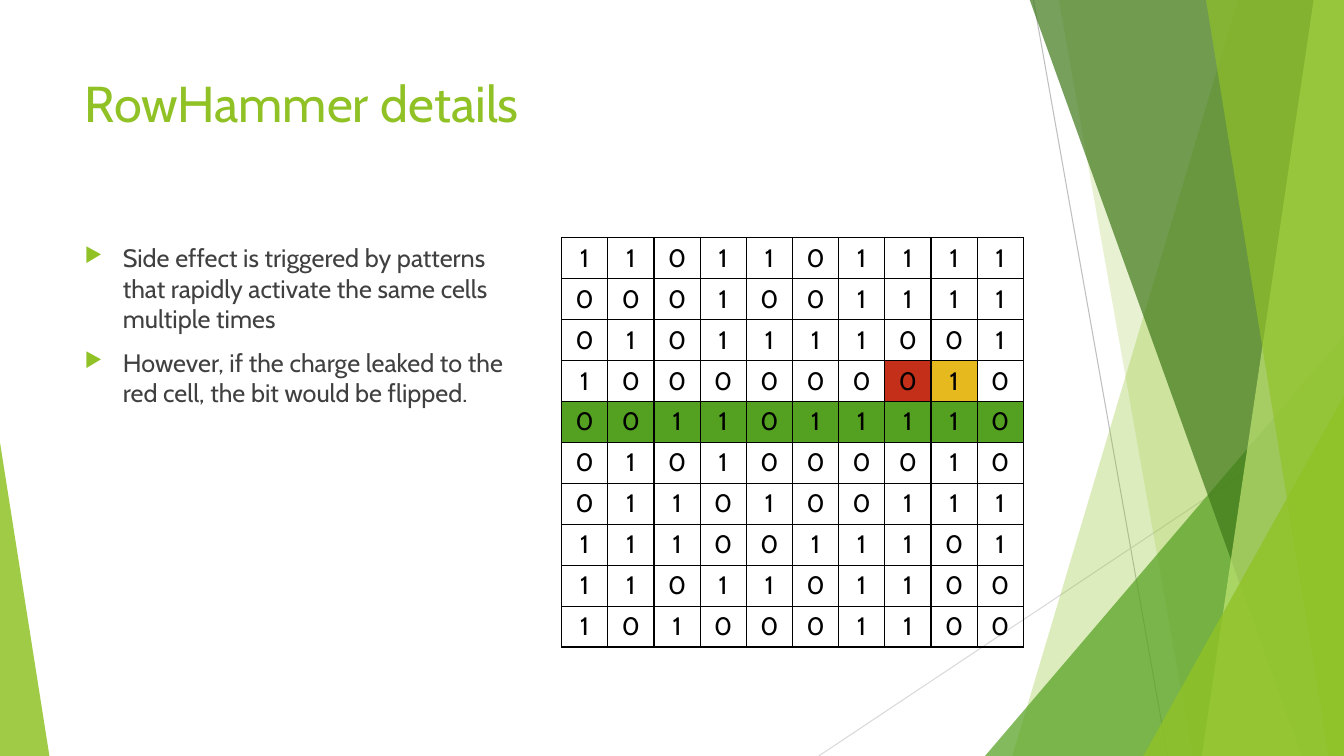
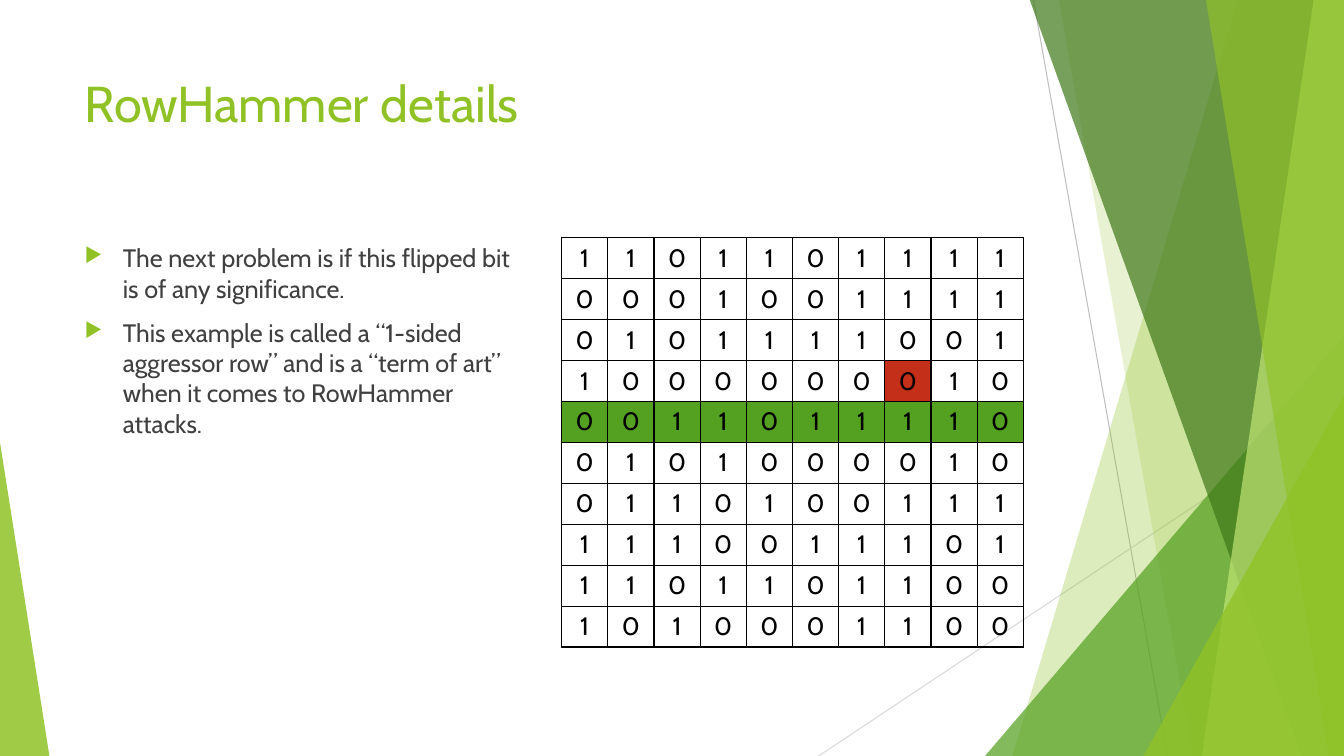
from lxml.etree import SubElement
from pptx import Presentation
from pptx.dml.color import RGBColor
from pptx.enum.shapes import MSO_CONNECTOR as Connector, MSO_SHAPE as Shape
from pptx.enum.text import MSO_ANCHOR as Anchor, PP_ALIGN as Align
from pptx.oxml.ns import qn
from pptx.util import Inches, Pt

WIDTH, HEIGHT = 13.33, 7.5
FONT = "Cabin"
COLORS = {
    "lime": "90C226", "green": "54A021", "forest": "3F7819", "pale": "C0E474",
    "red": "C42F1A", "amber": "E6B91E", "text": "404040", "black": "000000",
    "ray": "BFBFBF", "faint_ray": "D9D9D9",
}
TITLE_BOX = (0.74, 0.67, 9.4, 1.44)
BULLETS_BOX = (0.74, 2.36, 4.58, 4.24)
MEMORY_BOX = (5.57, 2.36, 4.58, 4.06)

MEMORY_ROWS = [
    "1101101111",
    "0001001111",
    "0101111001",
    "1000000010",
    "0011011110",
    "0101000010",
    "0110100111",
    "1110011101",
    "1101101100",
    "1010001100",
]
AGGRESSOR_ROW = 4
FLIPPED_BIT, NEIGHBOUR_BIT = (3, 7), (3, 8)

SLIDES = [
    (["Side effect is triggered by patterns that rapidly activate the same cells multiple times",
      "However, if the charge leaked to the red cell, the bit would be flipped."],
     {FLIPPED_BIT: "red", NEIGHBOUR_BIT: "amber"}),
    (["The next problem is if this flipped bit is of any significance.",
      "This example is called a “1-sided aggressor row” and is a “term of art” "
      "when it comes to RowHammer attacks."],
     {FLIPPED_BIT: "red"}),
]


def rgb(name):
    """Return the named palette colour."""
    return RGBColor.from_string(COLORS[name])


def inches(*lengths):
    """Convert several lengths to EMU."""
    return [Inches(length) for length in lengths]


def add_run(paragraph, text, size, color):
    """Add one formatted run to a paragraph."""
    run = paragraph.add_run()
    run.text = text
    run.font.size = Pt(size)
    run.font.name = FONT
    run.font.color.rgb = rgb(color)


def paint(shape, color, opacity):
    """Give a shape a translucent fill without outline or shadow."""
    shape.shadow.inherit = False
    shape.fill.solid()
    shape.fill.fore_color.rgb = rgb(color)
    tint = shape.element.spPr.find(qn("a:solidFill")).find(qn("a:srgbClr"))
    SubElement(tint, qn("a:alpha"), val=str(opacity * 1000))
    shape.line.fill.background()


def add_ray(slide, start, end, color):
    """Draw one thin background line."""
    ray = slide.shapes.add_connector(Connector.STRAIGHT, *inches(*start, *end))
    ray.line.color.rgb = rgb(color)
    ray.line.width = Pt(0.75)
    SubElement(ray.element.spPr, qn("a:effectLst"))


def add_facet(slide, top_x, bottom_x, color, opacity):
    """Fill the area from a slanted edge to the right side of the slide."""
    top = -0.01
    corners = [(WIDTH, top), (WIDTH, HEIGHT), (bottom_x, HEIGHT)]
    outline = slide.shapes.build_freeform(*inches(top_x, top), scale=1.0)
    outline.add_line_segments([inches(*corner) for corner in corners], close=True)
    paint(outline.convert_to_shape(), color, opacity)


def add_wedge(slide, left, width, height, apex, color, opacity):
    """Stand a right triangle on the bottom edge of the slide."""
    wedge = slide.shapes.add_shape(
        Shape.ISOSCELES_TRIANGLE, *inches(left, HEIGHT - height, width, height))
    wedge.adjustments[0] = apex
    paint(wedge, color, opacity)


def add_backdrop(slide):
    """Place the faceted green decoration shared by all slides."""
    add_ray(slide, (10.25, 0), (11.58, HEIGHT), "ray")
    add_ray(slide, (WIDTH, 4.03), (8.12, HEIGHT), "faint_ray")
    add_facet(slide, 12.28, 10.04, "lime", 30)
    add_facet(slide, 10.5, 11.83, "lime", 20)
    add_wedge(slide, 9.77, 3.56, 4.17, 1, "green", 72)
    add_facet(slide, 10.21, 12.91, "forest", 70)
    add_facet(slide, 13.03, 11.92, "pale", 70)
    add_facet(slide, 11.96, 13.18, "lime", 65)
    add_wedge(slide, 11.34, 1.99, 3.57, 1, "lime", 80)
    add_wedge(slide, 0, 0.49, 3.11, 0, "lime", 85)


def add_title(slide, box, text):
    """Move the title placeholder to its box and fill it."""
    title = slide.shapes.title
    title.left, title.top, title.width, title.height = inches(*box)
    title.text_frame.vertical_anchor = Anchor.TOP
    heading = title.text_frame.paragraphs[0]
    heading.alignment = Align.LEFT
    add_run(heading, text, 36, "lime")


def add_bullets(slide, box, points):
    """Write the points with lime arrow bullets."""
    frame = slide.shapes.add_textbox(*inches(*box)).text_frame
    frame.word_wrap = True
    for index, point in enumerate(points):
        paragraph = frame.add_paragraph() if index else frame.paragraphs[0]
        paragraph.space_before = Pt(10)
        add_run(paragraph, point, 18, "text")
        props = paragraph._p.get_or_add_pPr()
        props.set("marL", str(Inches(0.38)))
        props.set("indent", str(Inches(-0.38)))
        SubElement(SubElement(props, qn("a:buClr")), qn("a:srgbClr"), val=COLORS["lime"])
        SubElement(props, qn("a:buSzPct"), val="80000")
        SubElement(props, qn("a:buChar"), char="▶")


def format_bit(cell, bit, fill):
    """Write one bit in a cell with black borders and an optional fill."""
    props = cell._tc.get_or_add_tcPr()
    for side in ("lnL", "lnR", "lnT", "lnB"):
        border = SubElement(props, qn(f"a:{side}"), w=str(Pt(1)))
        ink = SubElement(border, qn("a:solidFill"))
        SubElement(ink, qn("a:srgbClr"), val=COLORS["black"])
    if fill:
        cell.fill.solid()
        cell.fill.fore_color.rgb = rgb(fill)
    else:
        cell.fill.background()
    paragraph = cell.text_frame.paragraphs[0]
    paragraph.alignment = Align.CENTER
    add_run(paragraph, bit, 18, "black")


def add_memory(slide, box, marks):
    """Draw the memory grid with its aggressor row and marked bits."""
    row_count, column_count = len(MEMORY_ROWS), len(MEMORY_ROWS[0])
    memory = slide.shapes.add_table(row_count, column_count, *inches(*box)).table
    memory.first_row = memory.horz_banding = False
    for row, bits in enumerate(MEMORY_ROWS):
        row_fill = "green" if row == AGGRESSOR_ROW else None
        for column, bit in enumerate(bits):
            format_bit(memory.cell(row, column), bit, marks.get((row, column), row_fill))


def add_detail_slide(deck, points, marks):
    """Build one slide with points on the left and memory on the right."""
    slide = deck.slides.add_slide(deck.slide_layouts[5])
    add_backdrop(slide)
    add_title(slide, TITLE_BOX, "RowHammer details")
    add_bullets(slide, BULLETS_BOX, points)
    add_memory(slide, MEMORY_BOX, marks)


def main():
    """Build and save the deck."""
    deck = Presentation()
    deck.slide_width, deck.slide_height = inches(WIDTH, HEIGHT)
    for points, marks in SLIDES:
        add_detail_slide(deck, points, marks)
    deck.save("out.pptx")


if __name__ == "__main__":
    main()
